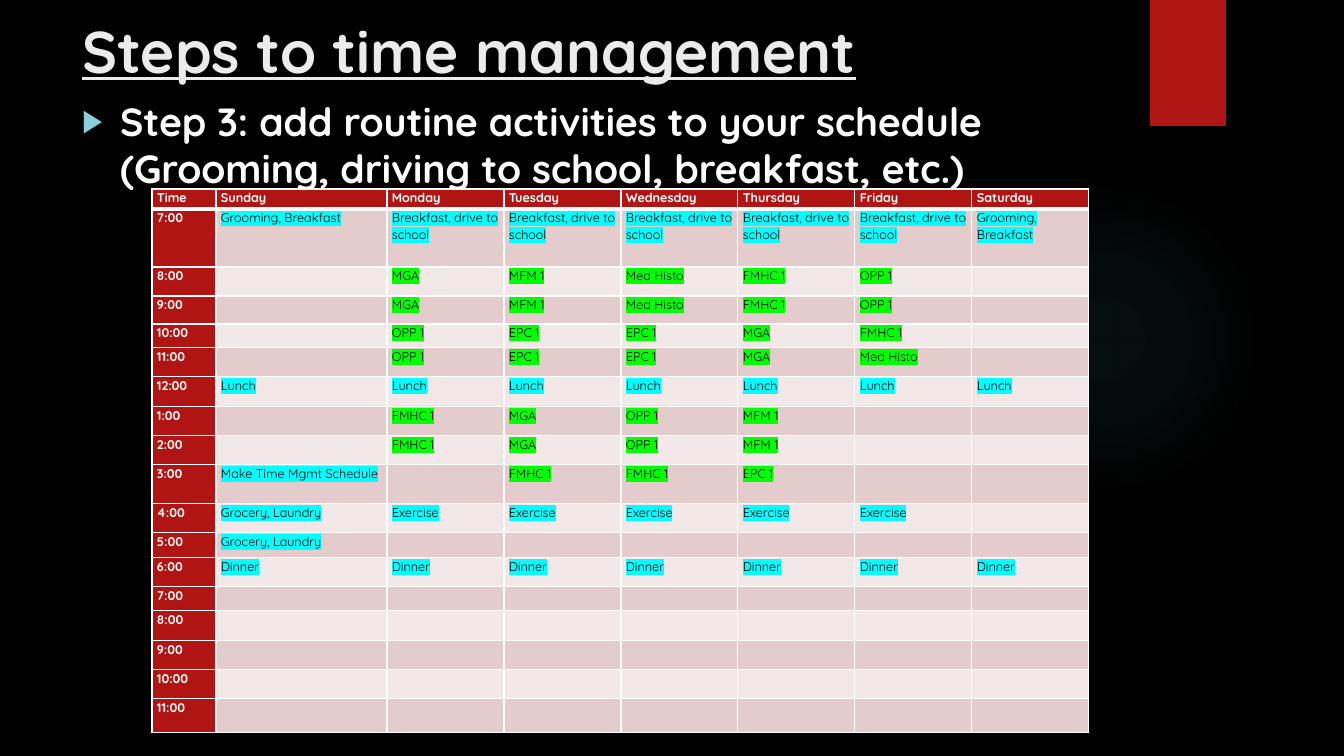
from lxml import etree
from pptx import Presentation
from pptx.dml.color import RGBColor
from pptx.enum.shapes import MSO_SHAPE
from pptx.enum.text import MSO_ANCHOR, MSO_AUTO_SIZE, PP_ALIGN
from pptx.oxml import parse_xml
from pptx.oxml.ns import nsdecls, qn
from pptx.util import Pt

RECTANGLE, OVAL = MSO_SHAPE.RECTANGLE, MSO_SHAPE.OVAL
TOP, MIDDLE = MSO_ANCHOR.TOP, MSO_ANCHOR.MIDDLE
LEFT = PP_ALIGN.LEFT
NO_FIT = MSO_AUTO_SIZE.NONE

TITLE = "Steps to time management"
STEP = "Step 3: add routine activities to your schedule (Grooming, driving to school, breakfast, etc.)"
DAYS = ["Sunday", "Monday", "Tuesday", "Wednesday", "Thursday", "Friday", "Saturday"]
MORNING = "Breakfast, drive to school"
COURSES = {"MGA", "MFM 1", "Med Histo", "FMHC 1", "OPP 1", "EPC 1"}
SCHEDULE = [
    (20, "Time", DAYS),
    (58, "7:00", ["Grooming, Breakfast"] + [MORNING] * 5 + ["Grooming, Breakfast"]),
    (29, "8:00", ["", "MGA", "MFM 1", "Med Histo", "FMHC 1", "OPP 1", ""]),
    (28, "9:00", ["", "MGA", "MFM 1", "Med Histo", "FMHC 1", "OPP 1", ""]),
    (24, "10:00", ["", "OPP 1", "EPC 1", "EPC 1", "MGA", "FMHC 1", ""]),
    (29, "11:00", ["", "OPP 1", "EPC 1", "EPC 1", "MGA", "Med Histo", ""]),
    (30, "12:00", ["Lunch"] * 7),
    (29, "1:00", ["", "FMHC 1", "MGA", "OPP 1", "MFM 1", "", ""]),
    (29, "2:00", ["", "FMHC 1", "MGA", "OPP 1", "MFM 1", "", ""]),
    (39, "3:00", ["Make Time Mgmt Schedule", "", "FMHC 1", "FMHC 1", "EPC 1", "", ""]),
    (29, "4:00", ["Grocery, Laundry"] + ["Exercise"] * 5 + [""]),
    (25, "5:00", ["Grocery, Laundry"] + [""] * 6),
    (29, "6:00", ["Dinner"] * 7),
    (24, "7:00", [""] * 7),
    (30, "8:00", [""] * 7),
    (29, "9:00", [""] * 7),
    (29, "10:00", [""] * 7),
    (34, "11:00", [""] * 7),
]
COLUMN_WIDTHS = [64, 171] + [117] * 6

FONT = "Quicksand"
RED, WHITE, BLACK = "B01513", "FFFFFF", "000000"
BANDS = ["F2E8E7", "E4CCCC"]
CYAN, GREEN = "00FFFF", "00FF00"


def px(length):
    return round(length * 914400 / 100.8)


def color(value):
    return RGBColor.from_string(value)


def add_span(para, text, size, ink, bold=False, underline=False, highlight=None):
    span = para.add_run()
    span.text = text
    span.font.name = FONT
    span.font.size = Pt(size)
    span.font.bold = bold
    if underline:
        span.font.underline = True
    span.font.color.rgb = color(ink)
    if highlight:
        mark = parse_xml(f'<a:highlight {nsdecls("a")}><a:srgbClr val="{highlight}"/></a:highlight>')
        span.font.fill._xPr.find(qn("a:solidFill")).addnext(mark)


def place(shape, left, top, width, height):
    shape.left, shape.top = px(left), px(top)
    shape.width, shape.height = px(width), px(height)


def prepare_placeholder(box, bounds, anchor):
    place(box, *bounds)
    frame = box.text_frame
    frame.word_wrap = True
    frame.auto_size = NO_FIT
    frame.vertical_anchor = anchor
    para = frame.paragraphs[0]
    para.alignment = LEFT
    para.space_before = Pt(0)
    return para


def add_bullet(para):
    properties = para._p.get_or_add_pPr()
    properties.set("marL", str(px(38)))
    properties.set("indent", str(px(-38)))
    for xml in (
        '<a:buClr {}><a:srgbClr val="8AD0D6"/></a:buClr>',
        '<a:buSzPct {} val="80000"/>',
        '<a:buFont {} typeface="Arial"/>',
        '<a:buChar {} char="▶"/>',
    ):
        properties.append(parse_xml(xml.format(nsdecls("a"))))


def add_decoration(slide, kind, bounds, fill):
    shape = slide.shapes.add_shape(kind, *map(px, bounds))
    shape.shadow.inherit = False
    shape.fill.solid()
    shape.fill.fore_color.rgb = color(fill)
    shape.line.fill.background()
    slide.shapes.title.element.addprevious(shape.element)
    return shape


def fade_glow(shape):
    stops = "".join(
        f'<a:gs pos="{position}000"><a:srgbClr val="50B9C1"><a:alpha val="{alpha}000"/></a:srgbClr></a:gs>'
        for position, alpha in [(0, 7), (36, 6), (69, 0), (100, 0)]
    )
    gradient = parse_xml(
        f'<a:gradFill {nsdecls("a")}><a:gsLst>{stops}</a:gsLst><a:path path="circle">'
        '<a:fillToRect l="50000" t="50000" r="50000" b="50000"/></a:path></a:gradFill>'
    )
    solid = shape.element.spPr.find(qn("a:solidFill"))
    solid.getparent().replace(solid, gradient)


def set_borders(cell, row):
    widths = {"L": 1, "R": 1, "T": 3 if row == 1 else 1, "B": 3 if row == 0 else 1}
    properties = cell._tc.get_or_add_tcPr()
    for index, (side, width) in enumerate(widths.items()):
        properties.insert(index, parse_xml(
            f'<a:ln{side} {nsdecls("a")} w="{Pt(width)}"><a:solidFill>'
            f'<a:srgbClr val="{WHITE}"/></a:solidFill></a:ln{side}>'
        ))


def fill_cell(cell, text, row, column):
    heading = row == 0 or column == 0
    cell.margin_left = cell.margin_right = px(5)
    cell.margin_top = cell.margin_bottom = 0
    cell.vertical_anchor = TOP
    cell.fill.solid()
    cell.fill.fore_color.rgb = color(RED if heading else BANDS[row % 2])
    set_borders(cell, row)
    para = cell.text_frame.paragraphs[0]
    para.line_spacing = 1.07
    if heading:
        add_span(para, text, 9, WHITE, bold=True)
    elif text:
        add_span(para, text, 9, BLACK, highlight=GREEN if text in COURSES else CYAN)
    else:
        etree.SubElement(para._p, qn("a:endParaRPr")).set("sz", "900")


def add_schedule(slide):
    heights = [height for height, _, _ in SCHEDULE]
    frame = slide.shapes.add_table(
        len(SCHEDULE), len(COLUMN_WIDTHS), px(152), px(189), px(sum(COLUMN_WIDTHS)), px(sum(heights))
    )
    table = frame.table
    for column, width in zip(table.columns, COLUMN_WIDTHS):
        column.width = px(width)
    for row, (height, hour, activities) in enumerate(SCHEDULE):
        table.rows[row].height = px(height)
        for column, text in enumerate([hour] + activities):
            fill_cell(table.cell(row, column), text, row, column)


def main():
    deck = Presentation()
    deck.slide_width, deck.slide_height = px(1344), px(756)
    slide = deck.slides.add_slide(deck.slide_layouts[1])
    slide.background.fill.solid()
    slide.background.fill.fore_color.rgb = color(BLACK)

    fade_glow(add_decoration(slide, OVAL, (949, 184, 310, 310), "50B9C1"))
    add_decoration(slide, RECTANGLE, (1150, 0, 76, 126), RED)

    title = prepare_placeholder(slide.shapes.title, (72, 8, 1037, 83), MIDDLE)
    add_span(title, TITLE, 42, "EBEBEB", bold=True, underline=True)
    step = prepare_placeholder(slide.placeholders[1], (72, 92, 1113, 598), TOP)
    add_bullet(step)
    add_span(step, STEP, 28, WHITE, bold=True)

    add_schedule(slide)
    deck.save("out.pptx")


if __name__ == "__main__":
    main()
